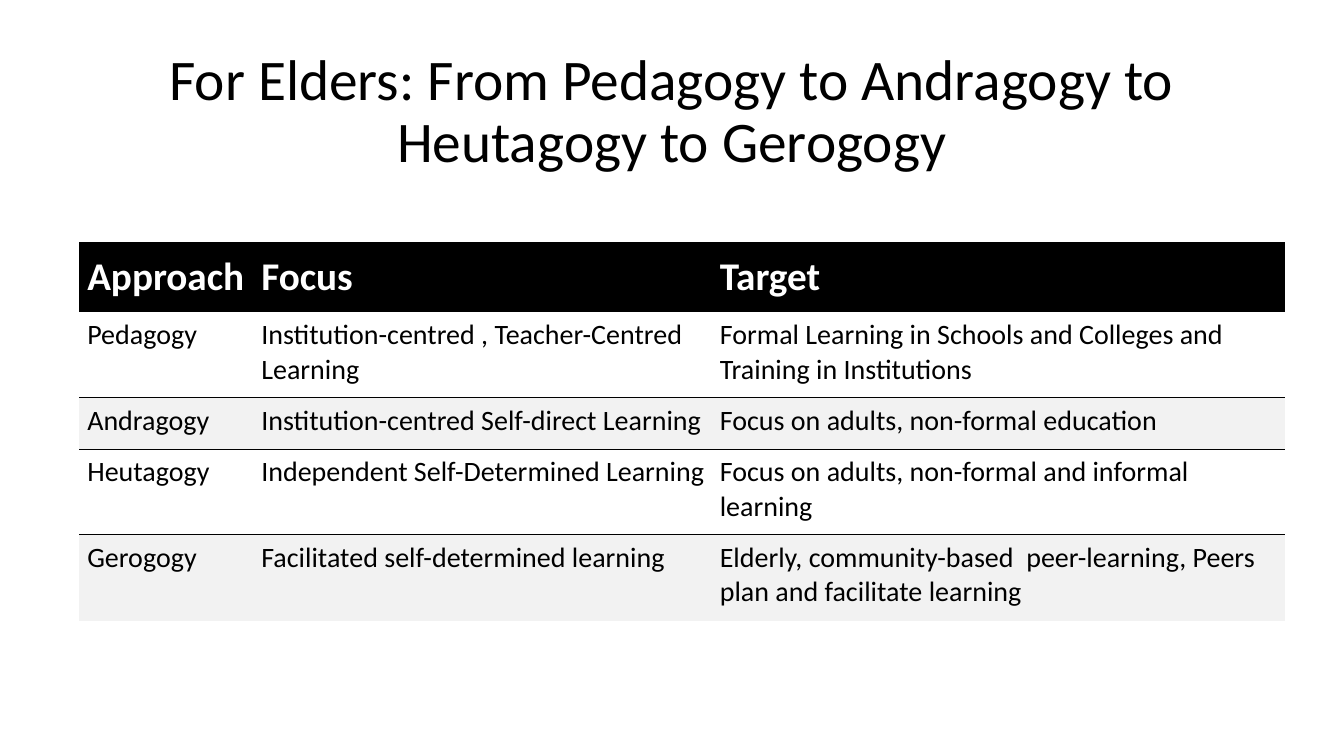
from dataclasses import dataclass

from lxml.etree import SubElement
from pptx import Presentation
from pptx.dml.color import RGBColor
from pptx.enum.text import MSO_ANCHOR, MSO_AUTO_SIZE, PP_ALIGN
from pptx.oxml import parse_xml
from pptx.oxml.ns import nsdecls, qn
from pptx.util import Pt

PLAIN_TABLE_STYLE = "{2D5ABB26-0587-4C30-8999-92F81FD0307C}"
COLUMN_WIDTHS = [124.3, 327.5, 409.4]
ROW_HEIGHTS = [49, 61, 36.5, 61, 61]
APPROACHES = [
    ["Approach", "Focus", "Target"],
    ["Pedagogy", "Institution-centred , Teacher-Centred Learning",
     "Formal Learning in Schools and Colleges and Training in Institutions"],
    ["Andragogy", "Institution-centred Self-direct Learning",
     "Focus on adults, non-formal education"],
    ["Heutagogy", "Independent Self-Determined Learning",
     "Focus on adults, non-formal and informal learning"],
    ["Gerogogy", "Facilitated self-determined learning",
     "Elderly, community-based  peer-learning, Peers plan and facilitate learning"],
]


@dataclass(frozen=True)
class Theme:
    font: str = "Calibri"
    ink: str = "000000"
    paper: str = "FFFFFF"
    band: str = "F2F2F2"
    title_size: float = 41
    header_size: float = 28
    body_size: float = 20


def write_text(frame, text, *, font, size, color, bold=False,
               align=PP_ALIGN.LEFT, line_spacing=1.0):
    para = frame.paragraphs[0]
    para.alignment = align
    para.line_spacing = line_spacing
    span = para.add_run()
    span.text = text
    span.font.name = font
    span.font.size = Pt(size)
    span.font.bold = bold
    span.font.color.rgb = RGBColor.from_string(color)


def add_cell_border(cell, side, color, width=1):
    """Draw one edge of a cell; side is "T" or "B". Call before filling."""
    properties = cell._tc.get_or_add_tcPr()
    line = SubElement(properties, qn(f"a:ln{side}"), w=str(Pt(width)))
    line.append(parse_xml(
        f'<a:solidFill {nsdecls("a")}><a:srgbClr val="{color}"/></a:solidFill>'))


class SlideBuilder:
    def __init__(self, slide, theme):
        self.slide = slide
        self.theme = theme

    def title(self, text, left, top, width, height):
        box = self.slide.shapes.title
        box.left, box.top, box.width, box.height = map(Pt, (left, top, width, height))
        frame = box.text_frame
        frame.word_wrap = True
        frame.auto_size = MSO_AUTO_SIZE.NONE
        frame.vertical_anchor = MSO_ANCHOR.MIDDLE
        write_text(frame, text, font=self.theme.font, size=self.theme.title_size,
                   color=self.theme.ink, align=PP_ALIGN.CENTER, line_spacing=0.9)

    def table(self, rows, left, top, column_widths, row_heights):
        graphic = self.slide.shapes.add_table(
            len(rows), len(column_widths), Pt(left), Pt(top),
            Pt(sum(column_widths)), Pt(sum(row_heights)))
        table = graphic.table
        graphic.element.find(".//" + qn("a:tableStyleId")).text = PLAIN_TABLE_STYLE
        table.horz_banding = False
        for column, width in zip(table.columns, column_widths):
            column.width = Pt(width)
        for row, height in zip(table.rows, row_heights):
            row.height = Pt(height)
        for row_index, texts in enumerate(rows):
            for column_index, text in enumerate(texts):
                self.cell(table.cell(row_index, column_index), text, row_index)

    def cell(self, cell, text, row_index):
        theme = self.theme
        is_header = row_index == 0
        is_banded = row_index % 2 == 0
        cell.margin_left, cell.margin_right = Pt(5.76), Pt(4.32)
        cell.margin_top = Pt(7.92 if is_header else 4.32)
        cell.margin_bottom = Pt(7.92)
        cell.vertical_anchor = MSO_ANCHOR.MIDDLE if is_header else MSO_ANCHOR.TOP
        if not is_header:
            add_cell_border(cell, "T" if is_banded else "B", theme.ink)
        if is_banded:
            cell.fill.solid()
            cell.fill.fore_color.rgb = RGBColor.from_string(
                theme.ink if is_header else theme.band)
        else:
            cell.fill.background()
        write_text(cell.text_frame, text, font=theme.font, bold=is_header,
                   size=theme.header_size if is_header else theme.body_size,
                   color=theme.paper if is_header else theme.ink)


def main():
    deck = Presentation()
    deck.slide_width, deck.slide_height = Pt(960), Pt(540)
    title_only = deck.slide_layouts.get_by_name("Title Only")
    page = SlideBuilder(deck.slides.add_slide(title_only), Theme())
    page.title("For Elders: From Pedagogy to Andragogy to Heutagogy to Gerogogy",
               66, 28.8, 828, 104.4)
    page.table(APPROACHES, 56.6, 172.8, COLUMN_WIDTHS, ROW_HEIGHTS)
    deck.save("out.pptx")


if __name__ == "__main__":
    main()
